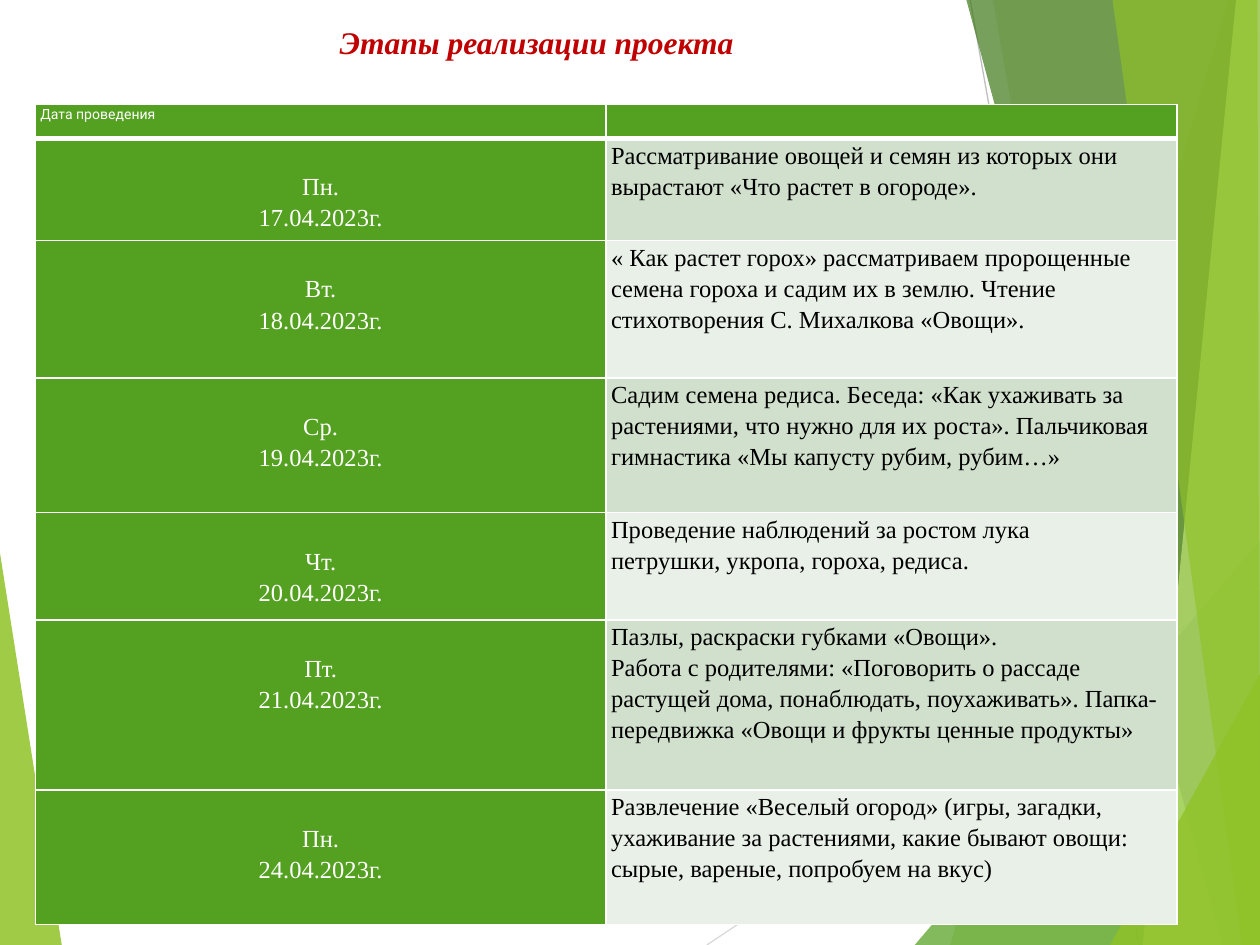
from pptx import Presentation
from pptx.dml.color import RGBColor
from pptx.enum.shapes import MSO_CONNECTOR
from pptx.enum.text import MSO_ANCHOR, MSO_AUTO_SIZE, PP_ALIGN
from pptx.oxml.ns import qn
from pptx.util import Inches, Pt
from lxml.etree import SubElement

THEME = {
    "serif": "Times New Roman", "sans": "Roboto",
    "title_size": 18, "body_size": 14, "header_size": 8,
    "title": "C00000", "light": "FFFFFF", "dark": "000000",
    "green": "54A021", "bands": ("D1DFCD", "E9F0E8"),
}

TITLE = "Этапы реализации проекта"
HEADER = "Дата проведения"
# Day, date, row height, activity paragraphs
STAGES = [
    ("Пн.", "17.04.2023г.", 0.81,
     ["Рассматривание овощей и семян из которых они вырастают «Что растет в огороде»."]),
    ("Вт.", "18.04.2023г.", 1.09,
     ["« Как растет горох» рассматриваем пророщенные семена гороха и садим их в землю. "
      "Чтение стихотворения С. Михалкова «Овощи»."]),
    ("Ср.", "19.04.2023г.", 1.07,
     ["Садим семена редиса. Беседа: «Как ухаживать за растениями, что нужно для их роста». "
      "Пальчиковая гимнастика «Мы капусту рубим, рубим…»"]),
    ("Чт.", "20.04.2023г.", 0.85,
     ["Проведение наблюдений за ростом лука\nпетрушки, укропа, гороха, редиса."]),
    ("Пт.", "21.04.2023г.", 1.35,
     ["Пазлы, раскраски губками «Овощи».",
      "Работа с родителями: «Поговорить о рассаде растущей дома, понаблюдать, поухаживать». "
      "Папка-передвижка «Овощи и фрукты ценные продукты»"]),
    ("Пн.", "24.04.2023г.", 1.07,
     ["Развлечение «Веселый огород» (игры, загадки, ухаживание за растениями, "
      "какие бывают овощи: сырые, вареные, попробуем на вкус)"]),
]
HEADER_HEIGHT = 0.27
TABLE_LEFT, TABLE_TOP, COLUMN_WIDTH = 0.28, 0.83, 4.53

# Facets: colour, opacity in percent, corners
LEFT_FACET = ("90C226", 85, [(0, 4.39), (0.49, 7.5), (0, 7.5)])
RIGHT_FACETS = [
    ("90C226", 30, [(9.75, 0), (7.54, 7.5), (10, 7.5), (10, 0)]),
    ("90C226", 20, [(7.88, 0), (9.19, 7.5), (10, 7.5), (10, 0)]),
    ("54A021", 72, [(7.26, 7.5), (10, 4.29), (10, 7.5)]),
    ("3F7819", 70, [(7.67, 0), (9.7, 7.5), (10, 7.5), (10, 0)]),
    ("C0E474", 70, [(9.81, 0), (9.07, 7.5), (10, 7.5), (10, 0)]),
    ("90C226", 65, [(8.83, 0), (9.86, 7.5), (10, 7.5), (9.98, 0)]),
    ("90C226", 80, [(8.81, 7.5), (10, 5.35), (10, 7.5)]),
]
# Thin lines: colour, start, end
THIN_LINES = [
    ("D9D9D9", (5.61, 7.5), (10, 4.57)),
    ("BFBFBF", (7.7, 0), (9.04, 7.5)),
]


def write_text(text_frame, paragraphs, *, size, color, font=THEME["serif"], bold=False,
               italic=False, align=PP_ALIGN.LEFT, line_spacing=1.0):
    for index, text in enumerate(paragraphs):
        paragraph = text_frame.paragraphs[0] if index == 0 else text_frame.add_paragraph()
        paragraph.text = text
        paragraph.alignment = align
        paragraph.line_spacing = line_spacing
        paragraph.space_before = Pt(0)
        for run in paragraph.runs:
            run.font.name = font
            run.font.size = Pt(size)
            run.font.bold = bold
            run.font.italic = italic
            run.font.color.rgb = RGBColor.from_string(color)


def add_facet(slide, color, opacity, corners):
    points = [(Inches(x), Inches(y)) for x, y in corners]
    builder = slide.shapes.build_freeform(*points[0])
    builder.add_line_segments(points[1:], close=True)
    shape = builder.convert_to_shape()
    shape.shadow.inherit = False
    shape.fill.solid()
    shape.fill.fore_color.rgb = RGBColor.from_string(color)
    shape.line.fill.background()
    color_element = shape.fill._xPr.find(qn("a:solidFill"))[0]
    SubElement(color_element, qn("a:alpha")).set("val", str(opacity * 1000))


def add_thin_line(slide, color, start, end):
    ends = [Inches(value) for value in start + end]
    connector = slide.shapes.add_connector(MSO_CONNECTOR.STRAIGHT, *ends)
    connector.line.color.rgb = RGBColor.from_string(color)
    connector.line.width = Pt(0.75)
    SubElement(connector._element.spPr, qn("a:effectLst"))


def format_cell(cell, fill, top_margin=0, bottom_border=1):
    cell.margin_left = cell.margin_right = Inches(0.04)
    cell.margin_top, cell.margin_bottom = Inches(top_margin), 0
    properties = cell._tc.get_or_add_tcPr()
    for side, width in (("L", 1), ("R", 1), ("T", 1), ("B", bottom_border)):
        border = SubElement(properties, qn(f"a:ln{side}"), w=str(Pt(width)))
        border_fill = SubElement(border, qn("a:solidFill"))
        SubElement(border_fill, qn("a:srgbClr"), val=THEME["light"])
    cell.fill.solid()
    cell.fill.fore_color.rgb = RGBColor.from_string(fill)


def add_stage_table(slide):
    heights = [HEADER_HEIGHT] + [stage[2] for stage in STAGES]
    table = slide.shapes.add_table(
        len(heights), 2, Inches(TABLE_LEFT), Inches(TABLE_TOP),
        Inches(2 * COLUMN_WIDTH), Inches(sum(heights))).table
    for row, height in zip(table.rows, heights):
        row.height = Inches(height)

    # Header row
    for cell in table.rows[0].cells:
        format_cell(cell, THEME["green"], bottom_border=3)
    write_text(table.cell(0, 0).text_frame, [HEADER], size=THEME["header_size"],
               color=THEME["light"], font=THEME["sans"], line_spacing=1.15)
    # An empty cell still needs a small type size to keep the row low
    table.cell(0, 1).text_frame.paragraphs[0].font.size = Pt(THEME["header_size"])
    end_properties = table.cell(0, 1).text_frame.paragraphs[0]._p.get_or_add_endParaRPr()
    end_properties.set("sz", str(THEME["header_size"] * 100))

    # One row per day, dates one line below the activities
    for index, (day, date, _, activities) in enumerate(STAGES):
        date_cell, activity_cell = table.rows[index + 1].cells
        format_cell(date_cell, THEME["green"], top_margin=0.25)
        format_cell(activity_cell, THEME["bands"][index % 2])
        write_text(date_cell.text_frame, [day, date], size=THEME["body_size"],
                   color=THEME["light"], align=PP_ALIGN.CENTER, line_spacing=1.15)
        write_text(activity_cell.text_frame, activities, size=THEME["body_size"],
                   color=THEME["dark"], line_spacing=1.15)


def main():
    presentation = Presentation()
    presentation.slide_width, presentation.slide_height = Inches(10), Inches(7.5)
    slide = presentation.slides.add_slide(presentation.slide_layouts[5])

    # Background facets
    add_facet(slide, *LEFT_FACET)
    for thin_line in THIN_LINES:
        add_thin_line(slide, *thin_line)
    for facet in RIGHT_FACETS:
        add_facet(slide, *facet)

    # Title
    title = slide.shapes.title
    title.left, title.top = Inches(2.53), Inches(0.13)
    title.width, title.height = Inches(3.46), Inches(0.71)
    title.text_frame.word_wrap = False
    title.text_frame.auto_size = MSO_AUTO_SIZE.NONE
    title.text_frame.vertical_anchor = MSO_ANCHOR.TOP
    write_text(title.text_frame, [TITLE], size=THEME["title_size"], color=THEME["title"],
               bold=True, italic=True, align=PP_ALIGN.CENTER)

    add_stage_table(slide)
    presentation.save("out.pptx")


if __name__ == "__main__":
    main()
